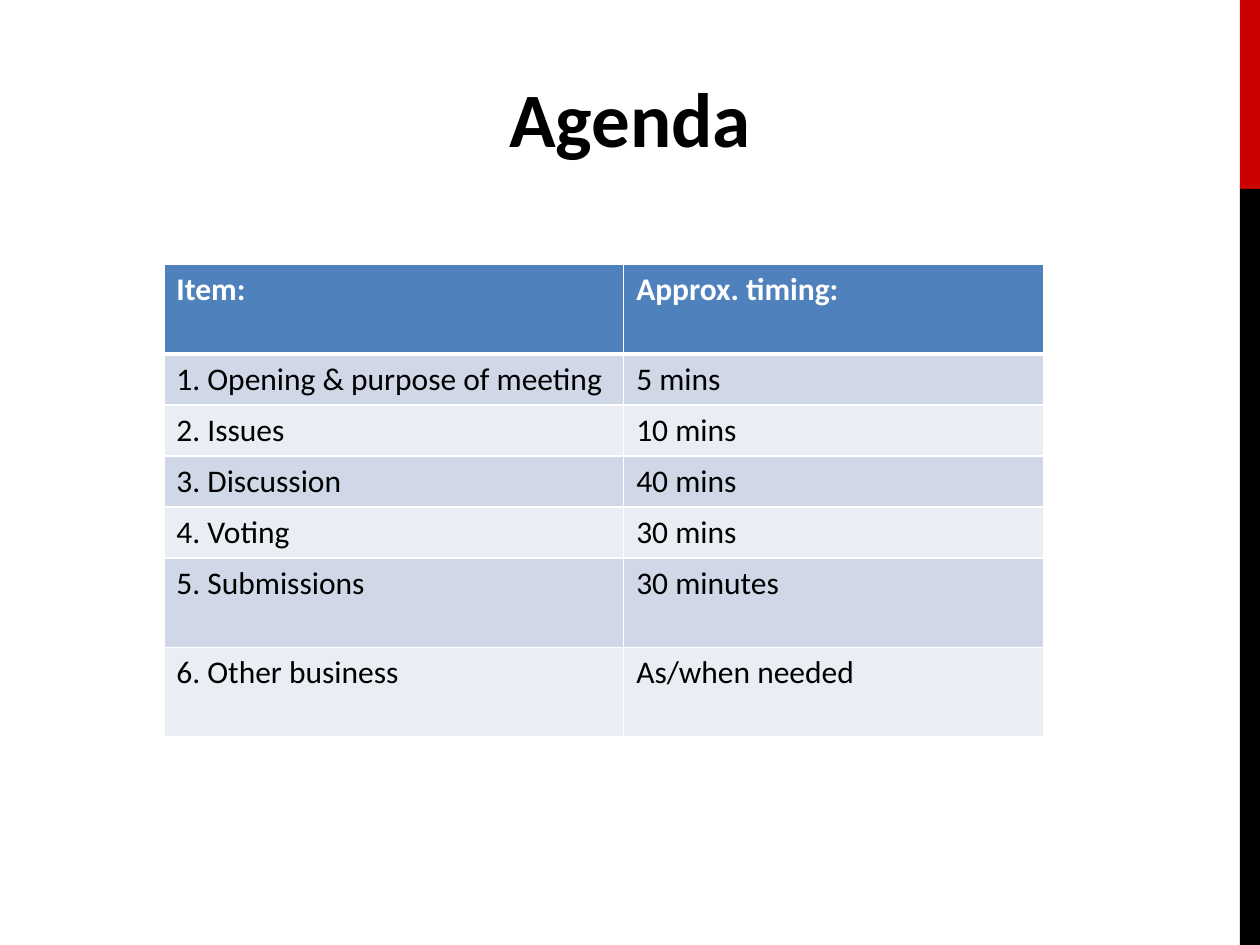
from lxml import etree
from pptx import Presentation
from pptx.dml.color import RGBColor
from pptx.enum.shapes import MSO_SHAPE
from pptx.enum.text import MSO_ANCHOR, PP_ALIGN
from pptx.oxml.ns import qn
from pptx.util import Pt

RECT = MSO_SHAPE.RECTANGLE
MIDDLE, CENTER = MSO_ANCHOR.MIDDLE, PP_ALIGN.CENTER

BLACK = RGBColor(0x00, 0x00, 0x00)
WHITE = RGBColor(0xFF, 0xFF, 0xFF)
RED = RGBColor(0xCC, 0x00, 0x00)
BLUE = RGBColor(0x4F, 0x81, 0xBD)
BAND_DARK = RGBColor(0xD0, 0xD8, 0xE8)
BAND_LIGHT = RGBColor(0xE9, 0xED, 0xF4)
FONT = "Calibri"

# Content: item, timing, row height
TITLE = "Agenda"
ROWS = [
    ("Item:", "Approx. timing:", 51),
    ("1. Opening & purpose of meeting", "5 mins", 29.2),
    ("2. Issues", "10 mins", 29.2),
    ("3. Discussion", "40 mins", 29.2),
    ("4. Voting", "30 mins", 29.2),
    ("5. Submissions", "30 minutes", 51),
    ("6. Other business", "As/when needed", 51),
]
COL_WIDTHS = [262.8, 239.8]
SIDE_BARS = [(RED, 0, 108), (BLACK, 108, 432)]  # colour, top, height
BAR_LEFT, BAR_WIDTH = 708.5, 11.5


def format_text(p, size, color, bold):
    for r in p.runs:
        r.font.name = FONT
        r.font.size = Pt(size)
        r.font.bold = bold
        r.font.color.rgb = color


def set_borders(cell, widths):
    """Draw white borders; widths maps an edge tag to points."""
    tcPr = cell._tc.get_or_add_tcPr()
    for i, (edge, width) in enumerate(widths.items()):
        ln = etree.Element(qn(f"a:{edge}"), w=str(Pt(width)))
        fill = etree.SubElement(ln, qn("a:solidFill"))
        etree.SubElement(fill, qn("a:srgbClr"), val=str(WHITE))
        tcPr.insert(i, ln)


prs = Presentation()
prs.slide_width, prs.slide_height = Pt(720), Pt(540)
slide = prs.slides.add_slide(prs.slide_layouts[5])

# Side bars
for color, top, height in SIDE_BARS:
    sp = slide.shapes.add_shape(RECT, Pt(BAR_LEFT), Pt(top), Pt(BAR_WIDTH), Pt(height))
    sp.shadow.inherit = False
    sp.fill.solid()
    sp.fill.fore_color.rgb = color
    sp.line.fill.background()

# Title
title = slide.shapes.title
title.left, title.top, title.width, title.height = Pt(36), Pt(21.6), Pt(648), Pt(90)
tf = title.text_frame
tf.text = TITLE
tf.vertical_anchor = MIDDLE
p = tf.paragraphs[0]
p.alignment = CENTER
format_text(p, 44, BLACK, True)

# Agenda table
table = slide.shapes.add_table(
    len(ROWS), len(COL_WIDTHS), Pt(93.6), Pt(151.2),
    Pt(sum(COL_WIDTHS)), Pt(sum(row[-1] for row in ROWS))).table
for column, width in zip(table.columns, COL_WIDTHS):
    column.width = Pt(width)

for i, (*texts, height) in enumerate(ROWS):
    table.rows[i].height = Pt(height)
    header = i == 0
    fill = BLUE if header else BAND_DARK if i % 2 else BAND_LIGHT
    borders = {"lnL": 1, "lnR": 1, "lnT": 3 if i == 1 else 1, "lnB": 3 if header else 1}
    for j, text in enumerate(texts):
        cell = table.cell(i, j)
        cell.text_frame.text = text
        format_text(cell.text_frame.paragraphs[0], 18, WHITE if header else BLACK, header)
        cell.fill.solid()
        cell.fill.fore_color.rgb = fill
        set_borders(cell, borders)

prs.save("out.pptx")
